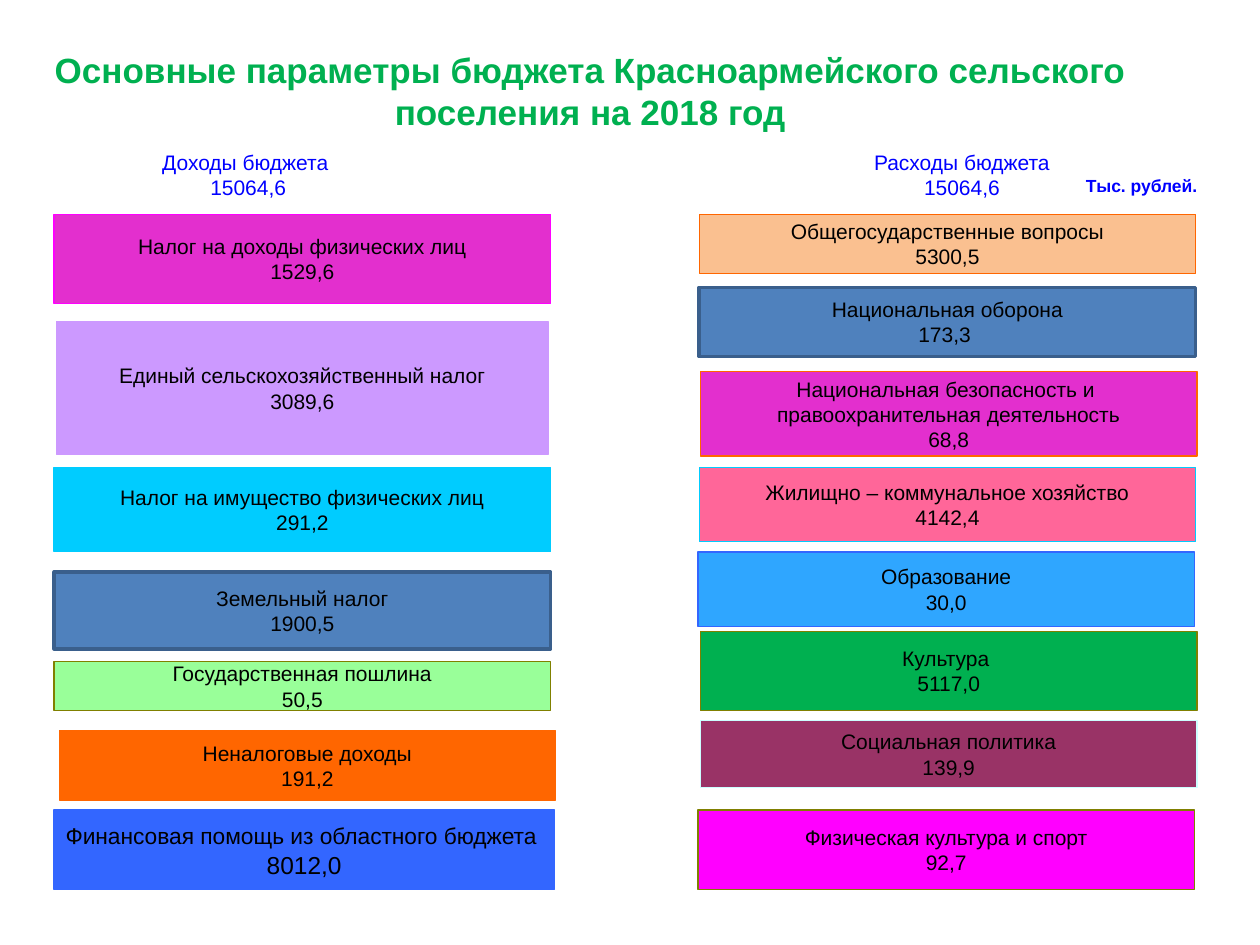
from pptx import Presentation
from pptx.dml.color import RGBColor
from pptx.enum.shapes import MSO_SHAPE as SHAPE
from pptx.enum.text import MSO_ANCHOR as ANCHOR, PP_ALIGN as ALIGN
from pptx.util import Inches, Pt

COLORS = {
    "black": "000000", "white": "FFFFFF", "blue": "0000FF", "green": "00B050",
    "orchid": "E32FCE", "magenta": "FF00FF", "lilac": "CC99FF", "cyan": "00CCFF",
    "steel": "4F81BD", "navy": "3A5F8C", "lime": "99FF99", "olive": "808000",
    "orange": "FF6600", "royal": "3366FF", "peach": "FAC090", "pink": "FF6699",
    "sky": "2FA6FF", "plum": "993366", "ice": "CCFFFF",
}
FONT = "Arial"
BOX_W = 3.94
INCOME = [
    (0.43, 1.7, BOX_W, 0.71, "orchid", "magenta", ["Налог на доходы физических лиц", "1529,6"]),
    (0.45, 2.55, 3.9, 1.06, "lilac", "lilac", ["Единый сельскохозяйственный налог", "3089,6"]),
    (0.43, 3.71, BOX_W, 0.67, "cyan", "cyan", ["Налог на имущество физических лиц", "291,2"]),
    (0.43, 4.54, BOX_W, 0.61, "steel", "navy", ["Земельный налог", "1900,5"]),
    (0.43, 5.25, BOX_W, 0.39, "lime", "olive", ["Государственная пошлина", "50,5"]),
    (0.47, 5.8, BOX_W, 0.55, "orange", "orange", ["Неналоговые доходы", "191,2"]),
]
EXPENSES = [
    (5.55, 1.7, BOX_W, 0.47, "peach", "orange", ["Общегосударственные вопросы", "5300,5"]),
    (5.55, 2.28, BOX_W, 0.55, "steel", "navy", ["Национальная оборона", "173,3 "]),
    (5.56, 2.95, BOX_W, 0.67, "orchid", "orange",
     ["Национальная безопасность и ", "правоохранительная деятельность", "68,8"]),
    (5.55, 3.71, BOX_W, 0.59, "pink", "cyan", ["Жилищно – коммунальное хозяйство", "4142,4"]),
    (5.54, 4.38, BOX_W, 0.59, "sky", "royal", ["Образование", "30,0"]),
    (5.56, 5.01, BOX_W, 0.63, "green", "olive", ["Культура ", "5117,0"]),
    (5.56, 5.72, BOX_W, 0.53, "plum", "ice", ["Социальная политика", "139,9"]),
    (5.54, 6.43, BOX_W, 0.63, "magenta", "olive", ["Физическая культура и спорт", "92,7"]),
]
HEADINGS = [
    (0.83, 1.15, 2.28, 0.47, "white", "white", ["Доходы бюджета ", "15064,6"]),
    (6.57, 1.15, 2.13, 0.47, "white", "white", ["Расходы бюджета", "15064,6"]),
]


def rgb(name):
    return RGBColor.from_string(COLORS[name])


def write(tf, paragraphs, color, bold=False):
    """Fill a text frame with centred paragraphs, each a list of (text, size) runs."""
    tf.vertical_anchor = ANCHOR.MIDDLE
    for i, runs in enumerate(paragraphs):
        p = tf.paragraphs[0] if i == 0 else tf.add_paragraph()
        p.alignment = ALIGN.CENTER
        for text, size in runs:
            r = p.add_run()
            r.text = text
            r.font.name = FONT
            r.font.size = Pt(size)
            r.font.bold = bold
            r.font.color.rgb = rgb(color)


def add_title(slide, text):
    sp = slide.shapes.add_textbox(Inches(0), Inches(0.28), Inches(9.37), Inches(0.87))
    sp.text_frame.word_wrap = True
    write(sp.text_frame, [[(text, 20)]], "green", bold=True)


def add_box(slide, x, y, w, h, fill, line, paragraphs, color="black", bold=False):
    sp = slide.shapes.add_shape(SHAPE.RECTANGLE, Inches(x), Inches(y), Inches(w), Inches(h))
    sp.shadow.inherit = False
    if fill:
        sp.fill.solid()
        sp.fill.fore_color.rgb = rgb(fill)
    else:
        sp.fill.background()
    sp.line.color.rgb = rgb(line)
    sp.line.width = Pt(2 if line == "navy" else 0.75)
    sp.text_frame.word_wrap = line == "navy"
    write(sp.text_frame, paragraphs, color, bold)


def add_boxes(slide, boxes, color="black"):
    for *frame, lines in boxes:
        add_box(slide, *frame, [[(text, 12)] for text in lines], color)


def main():
    prs = Presentation()
    prs.slide_width, prs.slide_height = Inches(10), Inches(7.5)
    slide = prs.slides.add_slide(prs.slide_layouts[6])
    add_title(slide, "Основные параметры бюджета Красноармейского сельского поселения на 2018 год")
    add_boxes(slide, HEADINGS, "blue")
    add_box(slide, 8.47, 1.31, 1.18, 0.32, None, "white", [[("Тыс. рублей.", 10)]], "blue", bold=True)
    add_boxes(slide, INCOME)
    add_box(slide, 0.43, 6.43, 3.97, 0.63, "royal", "royal",
            [[("Финансовая помощь из областного бюджета", 13), (" ", 14)], [("8012,0", 14)]])
    add_boxes(slide, EXPENSES)
    prs.save("out.pptx")


if __name__ == "__main__":
    main()
